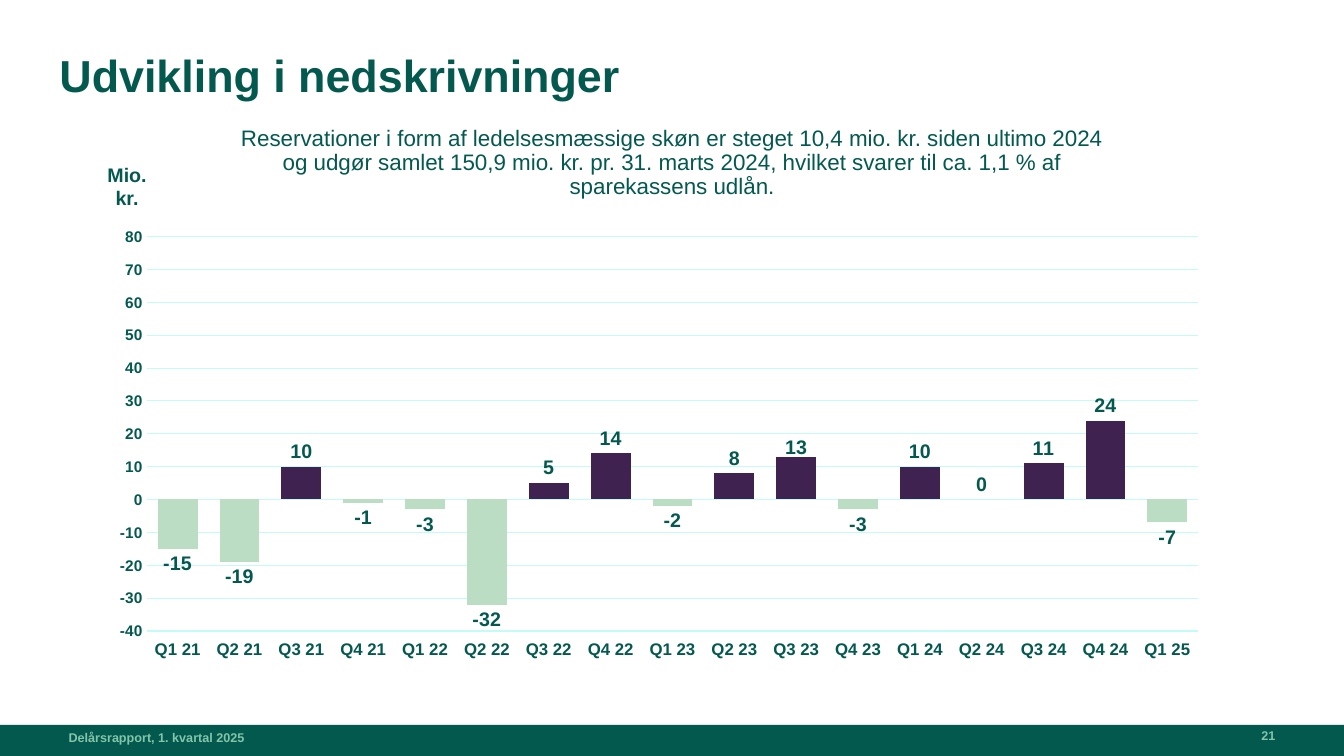
from lxml import etree
from pptx import Presentation
from pptx.chart.data import CategoryChartData
from pptx.dml.color import RGBColor
from pptx.enum.chart import XL_CHART_TYPE, XL_LABEL_POSITION, XL_TICK_LABEL_POSITION, XL_TICK_MARK
from pptx.enum.shapes import MSO_SHAPE
from pptx.enum.text import MSO_ANCHOR, PP_ALIGN
from pptx.oxml.ns import qn
from pptx.util import Pt

SCALE = 9144  # EMU per px, 100 px to the inch
WIDTH, HEIGHT = 1333, 750
GREEN = RGBColor(0x04, 0x59, 0x4F)
MINT = RGBColor(0x82, 0xC5, 0xA9)
PALE = RGBColor(0xBA, 0xDD, 0xC4)
PLUM = RGBColor(0x3F, 0x22, 0x4F)
AQUA = RGBColor(0xC3, 0xFC, 0xF6)
FONT = "Arial"
LEFT, CENTER, RIGHT = PP_ALIGN.LEFT, PP_ALIGN.CENTER, PP_ALIGN.RIGHT
TOP, BOTTOM = MSO_ANCHOR.TOP, MSO_ANCHOR.BOTTOM
COLUMN = XL_CHART_TYPE.COLUMN_CLUSTERED
OUTSIDE = XL_LABEL_POSITION.OUTSIDE_END
LOW = XL_TICK_LABEL_POSITION.LOW
NO_TICK = XL_TICK_MARK.NONE

VALUES = [-15, -19, 10, -1, -3, -32, 5, 14, -2, 8, 13, -3, 10, 0, 11, 24, -7]
QUARTERS = [f"Q{i % 4 + 1} {21 + i // 4}" for i in range(len(VALUES))]
LOWERED = 10  # Q3 23, whose label sits closer to its bar


def emu(*sizes):
    return [size * SCALE for size in sizes]


def style(font, size, color=GREEN, bold=True):
    font.name = FONT
    font.size = Pt(size)
    font.bold = bold
    font.color.rgb = color


def add_text(slide, box, text, size, color=GREEN, bold=True, align=LEFT,
             anchor=TOP, inset=(0, 0), wrap=True, spacing=None):
    frame = slide.shapes.add_textbox(*emu(*box)).text_frame
    frame.word_wrap = wrap
    frame.vertical_anchor = anchor
    side, edge = emu(*inset)
    frame.margin_left = frame.margin_right = side
    frame.margin_top = frame.margin_bottom = edge
    para = frame.paragraphs[0]
    para.alignment = align
    para.line_spacing = spacing
    run = para.add_run()
    run.text = text
    style(run.font, size, color, bold)


def add_layout(parent, index, **parts):
    """Insert a manual chart layout at the given child index."""
    layout = etree.Element(qn("c:layout"))
    manual = etree.SubElement(layout, qn("c:manualLayout"))
    for name, value in parts.items():
        etree.SubElement(manual, qn(f"c:{name}")).set("val", str(value))
    old = parent.find(qn("c:layout"))
    if old is not None:
        parent.remove(old)
    parent.insert(index, layout)


def draw_header(slide, box):
    x, y, w, h = box
    add_text(slide, (x, y, w, 68), "Udvikling i nedskrivninger", 32, spacing=0.9)
    add_text(slide, (x + 163, y + 68, 889, h - 68),
             "Reservationer i form af ledelsesmæssige skøn er steget 10,4 mio. kr. "
             "siden ultimo 2024 og udgør samlet 150,9 mio. kr. pr. 31. marts 2024, "
             "hvilket svarer til ca. 1,1 % af sparekassens udlån.",
             16, bold=False, align=CENTER, inset=(10, 5), spacing=0.9)


def style_axes(chart):
    quarter, amount = chart.category_axis, chart.value_axis
    for axis, size in ((quarter, 12), (amount, 11)):
        axis.major_tick_mark = axis.minor_tick_mark = NO_TICK
        style(axis.tick_labels.font, size)
    quarter.tick_label_position = LOW
    amount.minimum_scale, amount.maximum_scale, amount.major_unit = -40, 80, 10
    amount.format.line.fill.background()
    for line in (quarter.format.line, amount.major_gridlines.format.line):
        line.color.rgb = AQUA
        line.width = Pt(0.75)


def style_bars(plot):
    plot.gap_width, plot.overlap = 55, -27
    plot.vary_by_categories = False
    bars = plot.series[0]
    bars.invert_if_negative = False
    bars.format.fill.solid()
    bars.format.fill.fore_color.rgb = PALE
    for i, value in enumerate(VALUES):
        if value > 0:
            fill = bars.points[i].format.fill
            fill.solid()
            fill.fore_color.rgb = PLUM
    labels = bars.data_labels
    labels.show_value = True
    labels.position = OUTSIDE
    style(labels.font, 14)
    label = bars.points[LOWERED].data_label
    style(label.font, 14)
    label.position = OUTSIDE
    for item in labels._element.findall(qn("c:dLbl")):
        add_layout(item, 1, x=0, y=0.014)


def draw_chart(slide, box):
    x, y, w, h = box
    data = CategoryChartData()
    data.categories = QUARTERS
    data.add_series("Nedskrivninger", VALUES)
    chart = slide.shapes.add_chart(COLUMN, *emu(x, y, w, h), data).chart
    chart.has_legend = chart.has_title = False
    style(chart.font, 10, bold=False)
    style_axes(chart)
    style_bars(chart.plots[0])
    area = chart._chartSpace.find(".//" + qn("c:plotArea"))
    add_layout(area, 0, layoutTarget="inner", xMode="edge", yMode="edge",
               x=0.07, y=0.048, w=0.93, h=0.864)
    add_text(slide, (x + 25, y - 24, 68, 24), "Mio. kr.", 14, align=CENTER,
             anchor=BOTTOM, inset=(10, 5), wrap=False)


def draw_footer(slide, box):
    x, y, w, h = box
    band = slide.shapes.add_shape(MSO_SHAPE.RECTANGLE, *emu(x, y, w, h))
    band.shadow.inherit = False
    band.fill.solid()
    band.fill.fore_color.rgb = GREEN
    band.line.fill.background()
    add_text(slide, (x + 68, y - 8, 492, 28), "Delårsrapport, 1. kvartal 2025",
             9, MINT, anchor=BOTTOM)
    add_text(slide, (x + w - 193, y - 10, 125, 28), "21", 9, MINT,
             align=RIGHT, anchor=BOTTOM)


def main():
    deck = Presentation()
    deck.slide_width, deck.slide_height = emu(WIDTH, HEIGHT)
    slide = deck.slides.add_slide(deck.slide_layouts[6])
    draw_footer(slide, (0, 719, WIDTH, 31))
    draw_header(slide, (59, 53, 1197, 149))
    draw_chart(slide, (67, 213, 1122, 453))
    deck.save("out.pptx")


if __name__ == "__main__":
    main()
